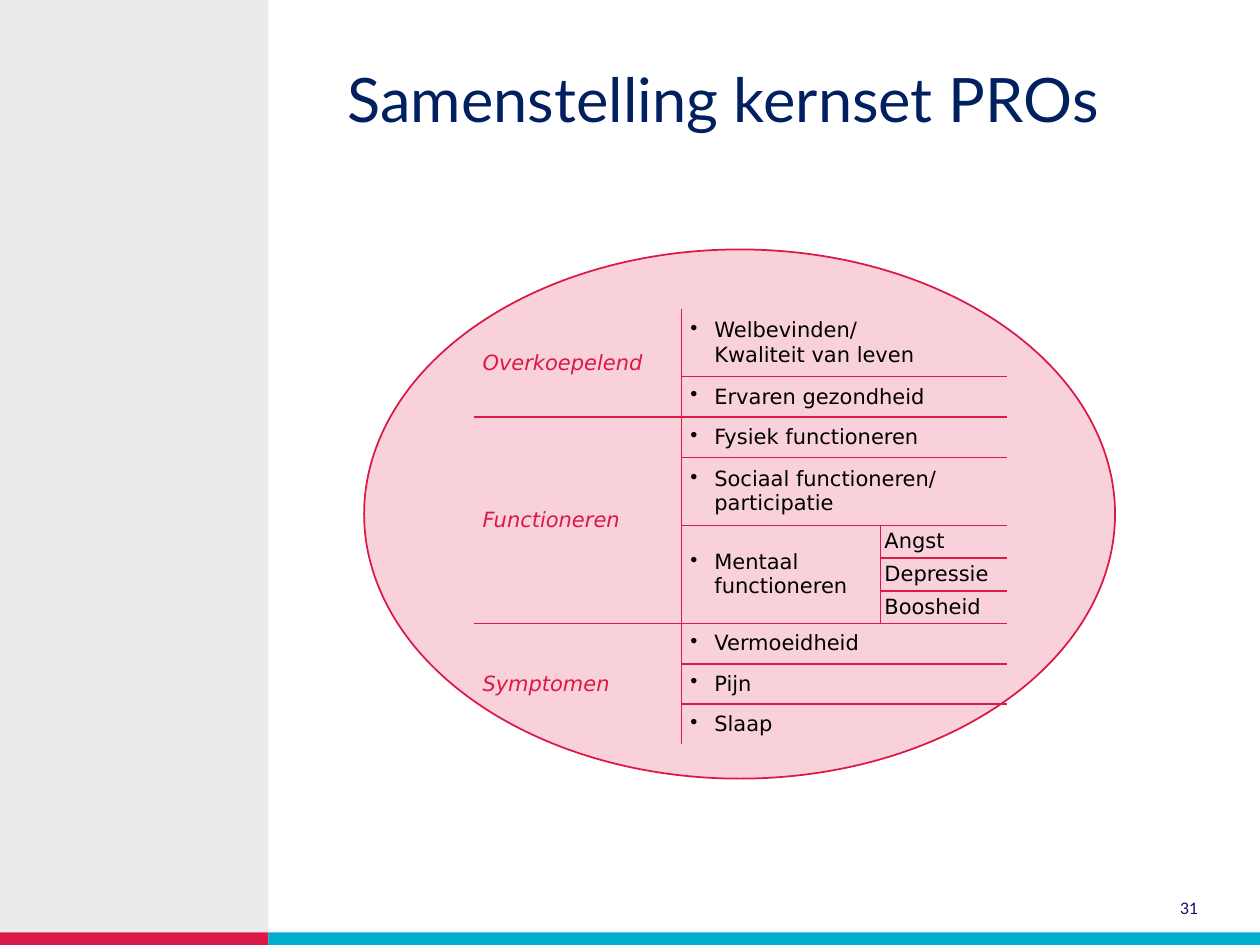
from copy import deepcopy
from dataclasses import dataclass
from itertools import product

from lxml.etree import SubElement
from pptx import Presentation
from pptx.dml.color import RGBColor
from pptx.enum.shapes import MSO_SHAPE
from pptx.enum.text import MSO_ANCHOR, PP_ALIGN
from pptx.oxml.ns import qn
from pptx.slide import Slide
from pptx.util import Inches, Pt

CRIMSON, PINK, BORDER = "DC1846", "F8D1DA", "DD1947"
COLUMNS = [16.5, 15.8, 10]
SINGLE, DOUBLE, DETAIL = 3.2, 5.4, 2.6
DOMAINS = {
    "Overkoepelend": [("Welbevinden/ \nKwaliteit van leven", []), ("Ervaren gezondheid", [])],
    "Functioneren": [
        ("Fysiek functioneren", []),
        ("Sociaal functioneren/\nparticipatie", []),
        ("Mentaal functioneren", ["Angst", "Depressie", "Boosheid"]),
    ],
    "Symptomen": [("Vermoeidheid", []), ("Pijn", []), ("Slaap", [])],
}


def grid(units):
    """Turn grid units, 100 across the slide and 75 down, into a length."""
    return Inches(units / 10)


def paint(color_format, value):
    """Set a colour from a hex string."""
    color_format.rgb = RGBColor.from_string(value)


def assign(target, values):
    """Set each named attribute of the target."""
    for name, value in values.items():
        setattr(target, name, value)


def margins(side, end):
    """Give the four margins of a text area in inches."""
    return {
        "margin_left": Inches(side), "margin_right": Inches(side),
        "margin_top": Inches(end), "margin_bottom": Inches(end),
    }


@dataclass
class SlideBuilder:
    """Hold the style and the slide, and add elements to it."""

    slide: Slide
    heading_font: str = "Lato"
    table_font: str = "DejaVu Sans"
    table_size: int = 12

    def fill_paragraph(self, paragraph, text, color, font, layout=None):
        """Fill one paragraph with formatted text."""
        assign(paragraph, layout or {})
        paragraph.text = text
        for run in paragraph.runs:
            assign(run.font, font)
            paint(run.font.color, color)
        for line_break in paragraph._p.findall(qn("a:br")):
            line_break.append(deepcopy(paragraph.runs[0]._r.rPr))

    def shape(self, kind, area, fill, outline=None):
        """Add a filled preset shape."""
        shape = self.slide.shapes.add_shape(kind, *map(grid, area))
        shape.shadow.inherit = False
        shape.fill.solid()
        paint(shape.fill.fore_color, fill)
        if outline:
            paint(shape.line.color, outline)
            shape.line.width = Pt(1)
        else:
            shape.line.fill.background()

    def text(self, area, text, size, color, layout):
        """Add a text box without margins."""
        frame = self.slide.shapes.add_textbox(*map(grid, area)).text_frame
        assign(frame, {"word_wrap": True, **margins(0, 0)})
        font = {"name": self.heading_font, "size": Pt(size)}
        self.fill_paragraph(frame.paragraphs[0], text, color, font, layout)

    def borders(self, cell, sides):
        """Draw the chosen sides of a cell and clear the others."""
        properties = cell._tc.get_or_add_tcPr()
        for side, shown in sides.items():
            line = SubElement(properties, qn(f"a:ln{side}"), w=str(Pt(1)))
            if shown:
                color = SubElement(SubElement(line, qn("a:solidFill")), qn("a:srgbClr"))
                color.set("val", BORDER)
            else:
                SubElement(line, qn("a:noFill"))
        cell.fill.background()

    def entry(self, table, area, text):
        """Fill an area of the table, styled by its first column."""
        top, left, bottom, right = area
        for row, column in product(range(top, bottom), range(left, right)):
            self.borders(table.cell(row, column), {
                "L": column == left > 0,
                "R": column == right - 1 < len(COLUMNS) - 1,
                "T": row == top > 0,
                "B": row == bottom - 1 < len(table.rows) - 1,
            })
        cell = table.cell(top, left)
        if (bottom - top) * (right - left) > 1:
            cell.merge(table.cell(bottom - 1, right - 1))
        spacing = margins(0.03, 0.01) if left == 2 else margins(0.07, 0.04)
        assign(cell, {"vertical_anchor": MSO_ANCHOR.MIDDLE, **spacing})
        paragraph = cell.text_frame.paragraphs[0]
        if left == 1:
            indent = Inches(0.19)
            properties = paragraph._p.get_or_add_pPr()
            properties.set("marL", str(indent))
            properties.set("indent", str(-indent))
            SubElement(properties, qn("a:buChar"), char="•")
        font = {"name": self.table_font, "size": Pt(self.table_size), "italic": left == 0}
        layout = {"space_after": Pt(8)} if left == 0 else {}
        self.fill_paragraph(paragraph, text, "000000" if left else CRIMSON, font, layout)

    def domain_table(self, left, top, domains):
        """Add the table of domains, their items and the details."""
        heights = []
        for item, details in (pair for items in domains.values() for pair in items):
            heights += [DETAIL] * len(details) or [DOUBLE if "\n" in item else SINGLE]
        size = (left, top, sum(COLUMNS), sum(heights))
        table = self.slide.shapes.add_table(
            len(heights), len(COLUMNS), *map(grid, size)).table
        assign(table, {"first_row": False, "horz_banding": False})
        for column, width in zip(table.columns, COLUMNS):
            column.width = grid(width)
        for row, height in zip(table.rows, heights):
            row.height = grid(height)
        row = 0
        for domain, items in domains.items():
            start = row
            for item, details in items:
                end = row + max(1, len(details))
                self.entry(table, (row, 1, end, 2 if details else 3), item)
                for offset, detail in enumerate(details):
                    self.entry(table, (row + offset, 2, row + offset + 1, 3), detail)
                row = end
            self.entry(table, (start, 0, row, 1), domain)


def main():
    """Build and save the slide."""
    deck = Presentation()
    assign(deck, {"slide_width": grid(100), "slide_height": grid(75)})
    builder = SlideBuilder(deck.slides.add_slide(deck.slide_layouts[6]))
    sidebar, footer = 21.3, 74
    builder.shape(MSO_SHAPE.RECTANGLE, (0, 0, sidebar, footer), "EBEBEB")
    builder.shape(MSO_SHAPE.RECTANGLE, (0, footer, sidebar, 1), "DC1946")
    builder.shape(MSO_SHAPE.RECTANGLE, (sidebar, footer, 100 - sidebar, 1), "00ADCC")
    builder.text((91.2, 71.3, 3.9, 1.6), "31", 9, "110E72", {"alignment": PP_ALIGN.RIGHT})
    builder.text((27.6, 4.8, 63.8, 6.1), "Samenstelling kernset PROs", 35, "002060",
                 {"line_spacing": Pt(42.6)})
    builder.shape(MSO_SHAPE.OVAL, (28.9, 19.8, 59.6, 42), PINK, CRIMSON)
    builder.domain_table(37.6, 24.5, DOMAINS)
    deck.save("out.pptx")


if __name__ == "__main__":
    main()
